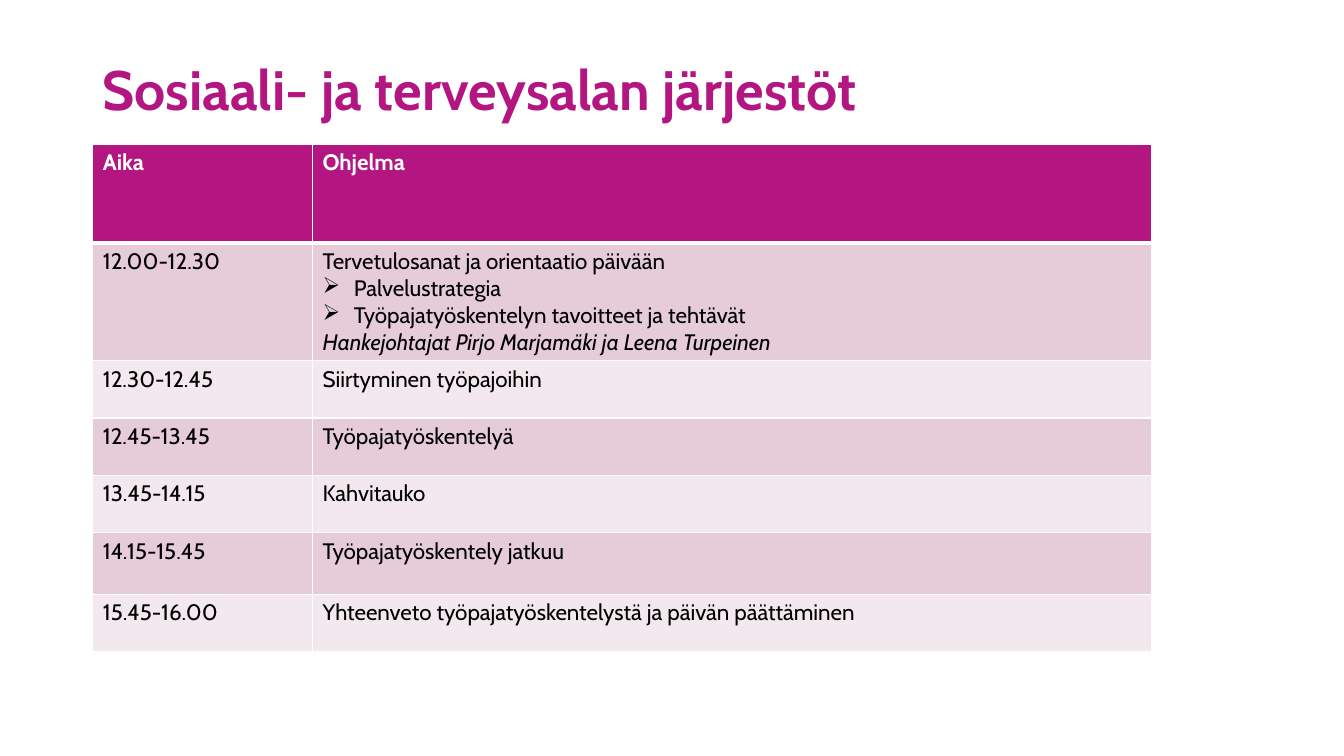
from lxml.etree import SubElement
from pptx import Presentation
from pptx.dml.color import RGBColor
from pptx.enum.text import MSO_ANCHOR as Anchor
from pptx.oxml.ns import qn
from pptx.util import Inches, Pt

FONT = "Cabin"
MAGENTA = RGBColor(0xB3, 0x16, 0x81)
ROSE = RGBColor(0xE5, 0xCC, 0xD8)
PALE_ROSE = RGBColor(0xF2, 0xE8, 0xED)
WHITE = RGBColor(0xFF, 0xFF, 0xFF)
BLACK = RGBColor(0x00, 0x00, 0x00)

PLAIN, BULLET, ITALIC = "plain", "bullet", "italic"
COLUMN_WIDTHS = [2.18, 8.32]
ROW_HEIGHTS = [0.98, 1.11, 0.57, 0.57, 0.57, 0.61, 0.57]
PROGRAMME = [
    ("Aika", "Ohjelma"),
    ("12.00-12.30", [
        ("Tervetulosanat ja orientaatio päivään", PLAIN),
        ("Palvelustrategia", BULLET),
        ("Työpajatyöskentelyn tavoitteet ja tehtävät", BULLET),
        ("Hankejohtajat Pirjo Marjamäki ja Leena Turpeinen", ITALIC),
    ]),
    ("12.30-12.45", "Siirtyminen työpajoihin"),
    ("12.45-13.45", "Työpajatyöskentelyä"),
    ("13.45-14.15", "Kahvitauko"),
    ("14.15-15.45", "Työpajatyöskentely jatkuu"),
    ("15.45-16.00", "Yhteenveto työpajatyöskentelystä ja päivän päättäminen"),
]


def add_run(paragraph, text, size, color, bold=False, italic=False):
    run = paragraph.add_run()
    run.text = text
    font = run.font
    font.name, font.size, font.bold, font.italic = FONT, Pt(size), bold, italic
    font.color.rgb = color


def add_bullet(paragraph):
    properties = paragraph._p.get_or_add_pPr()
    properties.set("marL", str(Inches(0.31)))
    properties.set("indent", str(Inches(-0.31)))
    SubElement(properties, qn("a:buChar"), char="➢")


def set_borders(cell, top, bottom):
    properties = cell._tc.get_or_add_tcPr()
    for side, width in (("L", 1), ("R", 1), ("T", top), ("B", bottom)):
        line = SubElement(properties, qn(f"a:ln{side}"), w=str(Pt(width)))
        fill = SubElement(line, qn("a:solidFill"))
        SubElement(fill, qn("a:srgbClr"), val=str(WHITE))


def fill_cell(cell, content, row):
    header = row == 0
    # Heavy rule between the header and the first session
    set_borders(cell, top=3 if row == 1 else 1, bottom=3 if header else 1)
    cell.fill.solid()
    cell.fill.fore_color.rgb = MAGENTA if header else ROSE if row % 2 else PALE_ROSE
    lines = [(content, PLAIN)] if isinstance(content, str) else content
    frame = cell.text_frame
    for index, (text, style) in enumerate(lines):
        paragraph = frame.add_paragraph() if index else frame.paragraphs[0]
        if style == BULLET:
            add_bullet(paragraph)
        add_run(paragraph, text, 16, WHITE if header else BLACK,
                bold=header, italic=style == ITALIC)


def add_title(slide, text):
    box = slide.shapes.add_textbox(Inches(0.92), Inches(0.54), Inches(10.5), Inches(0.76))
    frame = box.text_frame
    frame.word_wrap = True
    frame.vertical_anchor = Anchor.MIDDLE
    heading = frame.paragraphs[0]
    heading.line_spacing = 0.9
    add_run(heading, text, 39.6, MAGENTA, bold=True)


def add_programme(slide):
    table = slide.shapes.add_table(
        len(PROGRAMME), len(COLUMN_WIDTHS), Inches(0.92), Inches(1.43),
        Inches(sum(COLUMN_WIDTHS)), Inches(sum(ROW_HEIGHTS))).table
    for column, width in zip(table.columns, COLUMN_WIDTHS):
        column.width = Inches(width)
    for row, height in zip(table.rows, ROW_HEIGHTS):
        row.height = Inches(height)
    for row, session in enumerate(PROGRAMME):
        for column, content in enumerate(session):
            fill_cell(table.cell(row, column), content, row)


def main():
    deck = Presentation()
    deck.slide_width, deck.slide_height = Inches(13.33), Inches(7.5)
    slide = deck.slides.add_slide(deck.slide_layouts[6])
    # Heading
    add_title(slide, "Sosiaali- ja terveysalan järjestöt")
    # Timetable of the day
    add_programme(slide)
    deck.save("out.pptx")


if __name__ == "__main__":
    main()
